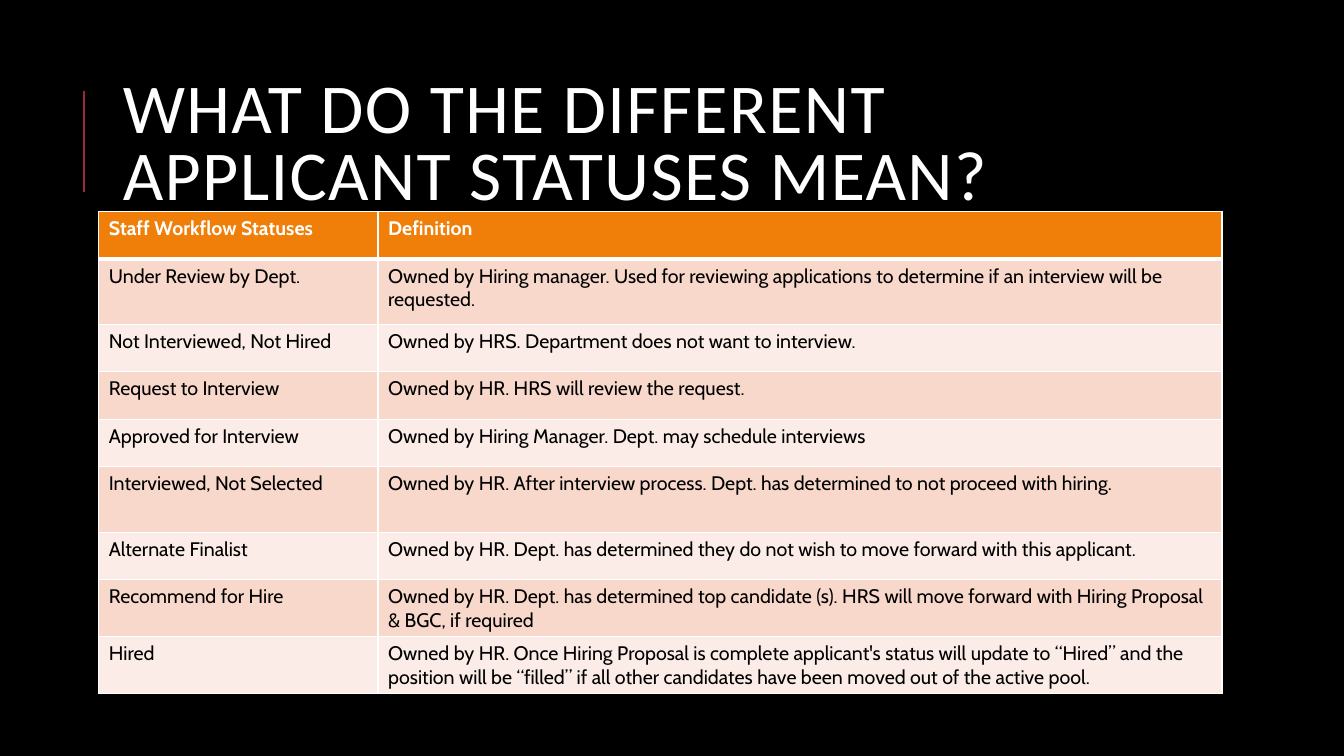
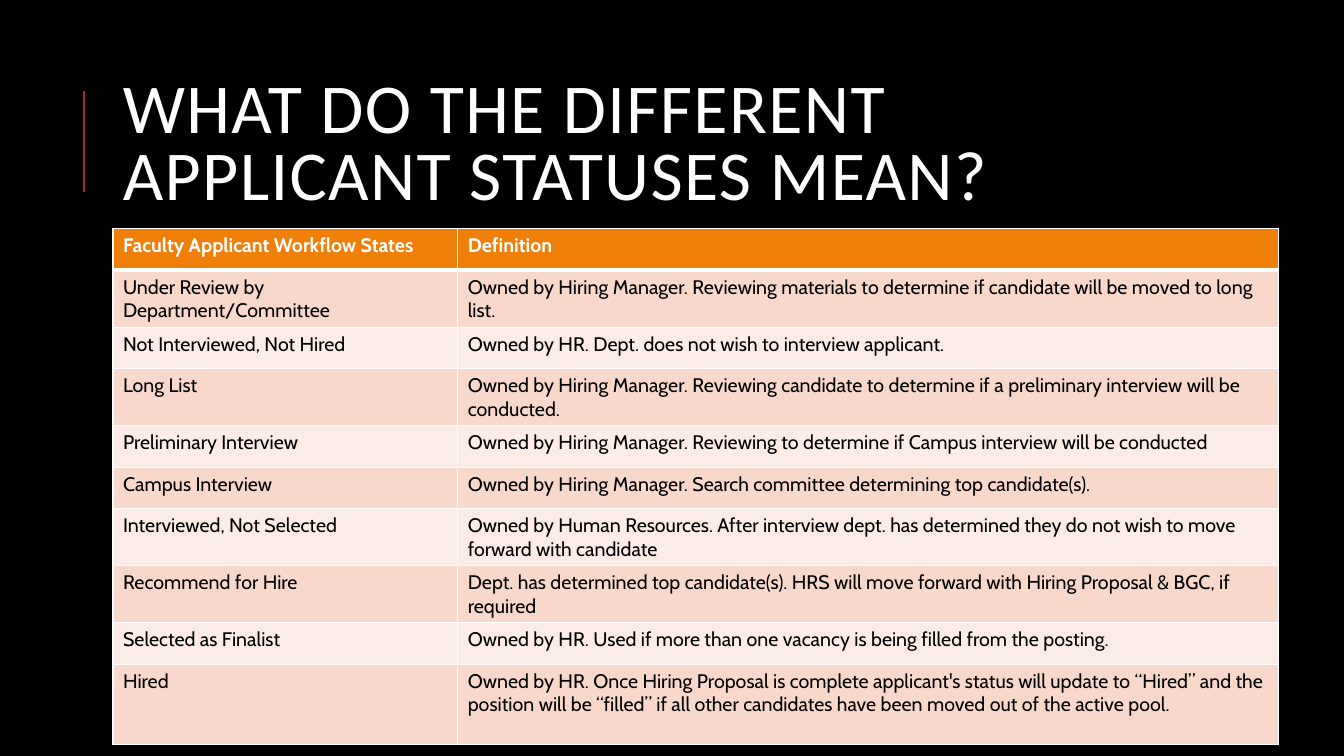
from dataclasses import dataclass

from lxml import etree
from pptx import Presentation
from pptx.dml.color import RGBColor
from pptx.enum.shapes import MSO_CONNECTOR
from pptx.enum.text import MSO_ANCHOR
from pptx.oxml.ns import qn
from pptx.util import Inches, Pt

STRAIGHT = MSO_CONNECTOR.STRAIGHT
MIDDLE = MSO_ANCHOR.MIDDLE


@dataclass(frozen=True)
class Theme:
    background: str = "000000"
    light_text: str = "FFFFFF"
    dark_text: str = "000000"
    accent: str = "9F2936"
    header_fill: str = "F07F09"
    row_fills: tuple = ("F9D8CC", "FCECE7")
    border: str = "FFFFFF"
    title_font: str = "Calibri"
    table_font: str = "Cabin"
    title_size: float = 50
    table_size: float = 14
    accent_width: float = 1.5
    border_width: float = 1
    header_rule_width: float = 3


TITLE = "WHAT DO THE DIFFERENT APPLICANT STATUSES MEAN?"
HIRED_DEFINITION = (
    "Owned by HR. Once Hiring Proposal is complete applicant's status will update to “Hired” "
    "and the position will be “filled” if all other candidates have been moved out of the active pool."
)

STAFF_STATUSES = [
    ("Staff Workflow Statuses", "Definition"),
    ("Under Review by Dept.",
     "Owned by Hiring manager. Used for reviewing applications to determine if an interview will be requested."),
    ("Not Interviewed, Not Hired", "Owned by HRS. Department does not want to interview."),
    ("Request to Interview", "Owned by HR. HRS will review the request."),
    ("Approved for Interview", "Owned by Hiring Manager. Dept. may schedule interviews"),
    ("Interviewed, Not Selected",
     "Owned by HR. After interview process. Dept. has determined to not proceed with hiring."),
    ("Alternate Finalist",
     "Owned by HR. Dept. has determined they do not wish to move forward with this applicant."),
    ("Recommend for Hire",
     "Owned by HR. Dept. has determined top candidate (s). HRS will move forward with "
     "Hiring Proposal & BGC, if required"),
    ("Hired", HIRED_DEFINITION),
]

FACULTY_STATES = [
    ("Faculty Applicant Workflow States", "Definition"),
    ("Under Review by Department/Committee",
     "Owned by Hiring Manager. Reviewing materials to determine if candidate will be moved to long list."),
    ("Not Interviewed, Not Hired", "Owned by HR. Dept. does not wish to interview applicant."),
    ("Long List",
     "Owned by Hiring Manager. Reviewing candidate to determine if a preliminary interview will be conducted."),
    ("Preliminary Interview",
     "Owned by Hiring Manager. Reviewing to determine if Campus interview will be conducted"),
    ("Campus Interview", "Owned by Hiring Manager. Search committee determining top candidate(s)."),
    ("Interviewed, Not Selected",
     "Owned by Human Resources. After interview dept. has determined they do not wish to move "
     "forward with candidate"),
    ("Recommend for Hire",
     "Dept. has determined top candidate(s). HRS will move forward with Hiring Proposal & BGC, if required"),
    ("Selected as Finalist",
     "Owned by HR. Used if more than one vacancy is being filled from the posting."),
    ("Hired", HIRED_DEFINITION),
]


def write_text(text_frame, text, *, font, size, color, bold=False, line_spacing=None, tracking=None):
    """Write one paragraph; tracking is the letter spacing in points."""
    paragraph = text_frame.paragraphs[0]
    if line_spacing:
        paragraph.line_spacing = line_spacing
    run = paragraph.add_run()
    run.text = text
    run.font.name = font
    run.font.size = Pt(size)
    run.font.bold = bold
    run.font.color.rgb = RGBColor.from_string(color)
    if tracking:
        run.font._element.set("spc", str(int(tracking * 100)))


def set_borders(cell, color, widths):
    """Draw cell borders; widths maps L, R, T, B, in that order, to points."""
    properties = cell._tc.get_or_add_tcPr()
    for position, (side, width) in enumerate(widths.items()):
        line = etree.Element(qn(f"a:ln{side}"), w=str(Pt(width)))
        fill = etree.SubElement(line, qn("a:solidFill"))
        etree.SubElement(fill, qn("a:srgbClr"), val=color)
        properties.insert(position, line)


class Deck:
    def __init__(self, theme):
        self.theme = theme
        self.presentation = Presentation()
        self.presentation.slide_width = Inches(13.33)
        self.presentation.slide_height = Inches(7.5)
        self.slide = None

    def add_slide(self, title):
        self.slide = self.presentation.slides.add_slide(self.presentation.slide_layouts[6])
        fill = self.slide.background.fill
        fill.solid()
        fill.fore_color.rgb = RGBColor.from_string(self.theme.background)
        self.add_accent_line()
        self.add_title(title)

    def add_accent_line(self):
        line = self.slide.shapes.add_connector(
            STRAIGHT, Inches(0.83), Inches(1.9), Inches(0.83), Inches(0.9))
        line.line.color.rgb = RGBColor.from_string(self.theme.accent)
        line.line.width = Pt(self.theme.accent_width)
        etree.SubElement(line._element.spPr, qn("a:effectLst"))

    def add_title(self, title):
        box = self.slide.shapes.add_textbox(Inches(1.12), Inches(0.64), Inches(10.63), Inches(1.64))
        box.text_frame.word_wrap = True
        box.text_frame.vertical_anchor = MIDDLE
        write_text(box.text_frame, title, font=self.theme.title_font, size=self.theme.title_size,
                   color=self.theme.light_text, line_spacing=0.8, tracking=1)

    def add_table(self, rows, left, top, column_widths, row_height, tall_rows):
        """Add a table; tall_rows maps a row index to a height other than row_height."""
        heights = [tall_rows.get(index, row_height) for index in range(len(rows))]
        frame = self.slide.shapes.add_table(
            len(rows), len(column_widths), Inches(left), Inches(top),
            Inches(sum(column_widths)), Inches(sum(heights)))
        table = frame.table
        for column, width in zip(table.columns, column_widths):
            column.width = Inches(width)
        for row_index, (row, height) in enumerate(zip(rows, heights)):
            table.rows[row_index].height = Inches(height)
            for column_index, text in enumerate(row):
                self.fill_cell(table.cell(row_index, column_index), text, row_index)

    def fill_cell(self, cell, text, row_index):
        theme = self.theme
        is_header = row_index == 0
        fill_color = theme.header_fill if is_header else theme.row_fills[(row_index - 1) % 2]
        cell.fill.solid()
        cell.fill.fore_color.rgb = RGBColor.from_string(fill_color)
        write_text(cell.text_frame, text, font=theme.table_font, size=theme.table_size,
                   color=theme.light_text if is_header else theme.dark_text, bold=is_header)
        widths = dict.fromkeys("LRTB", theme.border_width)
        if is_header:
            widths["B"] = theme.header_rule_width
        elif row_index == 1:
            widths["T"] = theme.header_rule_width
        set_borders(cell, theme.border, widths)


def main():
    deck = Deck(Theme())
    deck.add_slide(TITLE)
    deck.add_table(STAFF_STATUSES, 0.98, 2.1, (2.77, 8.37), 0.47, {1: 0.65, 5: 0.65})
    deck.add_slide(TITLE)
    deck.add_table(FACULTY_STATES, 1.12, 2.27, (3.42, 8.14), 0.41, {6: 0.56, 9: 0.8})
    deck.presentation.save("out.pptx")


if __name__ == "__main__":
    main()
